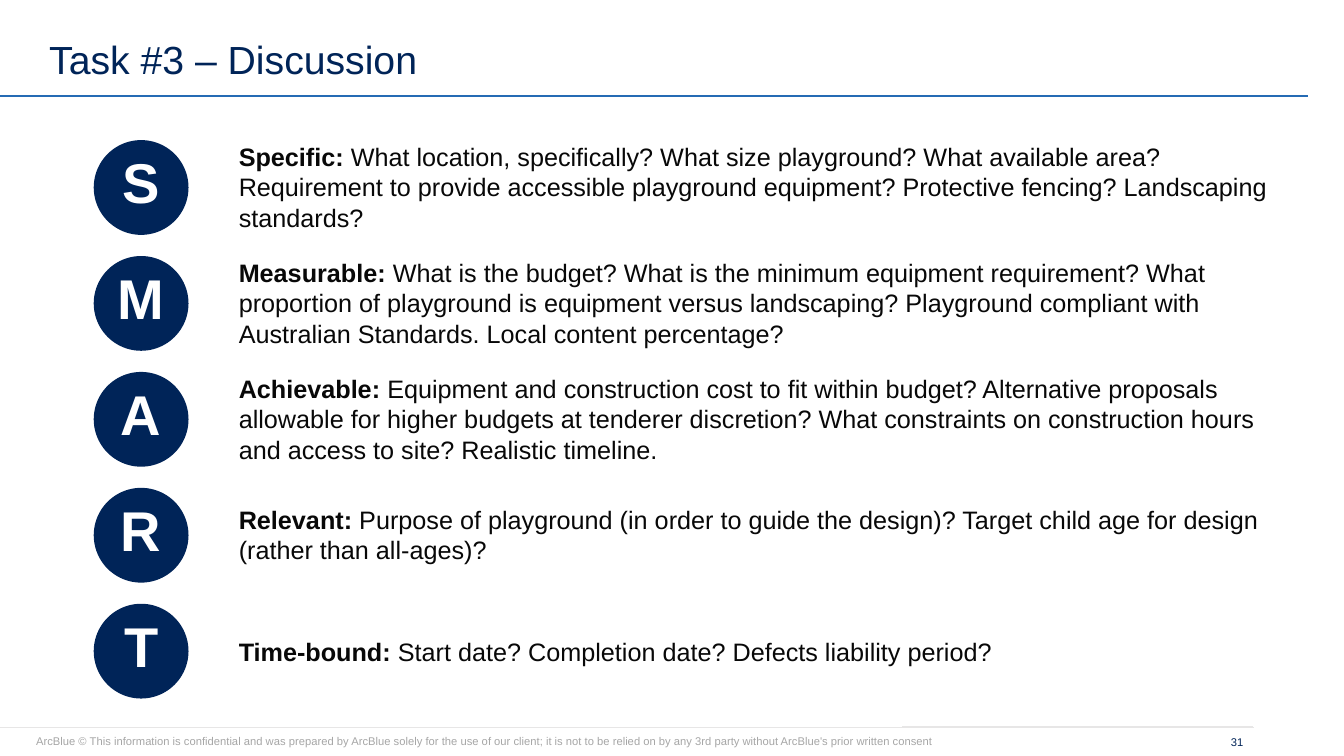
from pptx import Presentation
from pptx.dml.color import RGBColor
from pptx.enum.shapes import MSO_CONNECTOR, MSO_SHAPE
from pptx.enum.text import MSO_ANCHOR, PP_ALIGN
from pptx.oxml.ns import qn
from pptx.util import Inches, Pt
from lxml import etree

NAVY = RGBColor(0x00, 0x24, 0x58)
BLUE = RGBColor(0x25, 0x6B, 0xB4)
INK = RGBColor(0x08, 0x08, 0x08)
GREY = RGBColor(0xA6, 0xA6, 0xA6)
PALE = RGBColor(0xE7, 0xE6, 0xE6)
WHITE = RGBColor(0xFF, 0xFF, 0xFF)

TOP, MIDDLE, BOTTOM = MSO_ANCHOR.TOP, MSO_ANCHOR.MIDDLE, MSO_ANCHOR.BOTTOM
LEFT, CENTER, RIGHT = PP_ALIGN.LEFT, PP_ALIGN.CENTER, PP_ALIGN.RIGHT
STRAIGHT, OVAL = MSO_CONNECTOR.STRAIGHT, MSO_SHAPE.OVAL

FONT = "Arial"
FIRST_TOP, ROW_PITCH, DISC_SIZE = 1.39, 1.15, 0.94

# Heading, height of the text box, questions
CRITERIA = [
    ("Specific", 1.01,
     "What location, specifically? What size playground? What available area? "
     "Requirement to provide accessible playground equipment? Protective fencing? "
     "Landscaping standards?"),
    ("Measurable", 1.01,
     "What is the budget? What is the minimum equipment requirement? What proportion of "
     "playground is equipment versus landscaping? Playground compliant with Australian "
     "Standards. Local content percentage?"),
    ("Achievable", 1.01,
     "Equipment and construction cost to fit within budget? Alternative proposals allowable "
     "for higher budgets at tenderer discretion? What constraints on construction hours and "
     "access to site? Realistic timeline."),
    ("Relevant", 0.71,
     "Purpose of playground (in order to guide the design)? Target child age for design "
     "(rather than all-ages)?"),
    ("Time-bound", 0.4, "Start date? Completion date? Defects liability period?"),
]
FOOTER = ("ArcBlue © This information is confidential and was prepared by ArcBlue solely for "
          "the use of our client; it is not to be relied on by any 3rd party without ArcBlue's "
          "prior written consent")


def write(shape, text, size, color, lead="", bold=False, align=LEFT, anchor=TOP,
          line_spacing=None):
    """Fill a shape with one paragraph, opened by an optional bold lead."""
    frame = shape.text_frame
    frame.word_wrap = True
    frame.vertical_anchor = anchor
    para = frame.paragraphs[0]
    para.alignment = align
    if line_spacing:
        para.line_spacing = line_spacing
    for words, heavy in ((lead, True), (text, bold)):
        if words:
            span = para.add_run()
            span.text = words
            span.font.name = FONT
            span.font.size = Pt(size)
            span.font.bold = heavy
            span.font.color.rgb = color


def add_text(page, left, top, width, height, text, size, color, **style):
    box = page.shapes.add_textbox(Inches(left), Inches(top), Inches(width), Inches(height))
    write(box, text, size, color, **style)


def add_rule(page, start, end, y, color, weight):
    rule = page.shapes.add_connector(STRAIGHT, Inches(start), Inches(y), Inches(end), Inches(y))
    rule.line.color.rgb = color
    rule.line.width = Pt(weight)
    etree.SubElement(rule._element.spPr, qn("a:effectLst"))


def add_disc(page, top, letter):
    disc = page.shapes.add_shape(OVAL, Inches(0.93), Inches(top),
                                 Inches(DISC_SIZE), Inches(DISC_SIZE))
    disc.shadow.inherit = False
    disc.fill.solid()
    disc.fill.fore_color.rgb = NAVY
    disc.line.fill.background()
    disc.text_frame.margin_top = Inches(0)
    disc.text_frame.margin_bottom = Inches(0.12)
    write(disc, letter, 40, WHITE, bold=True, align=CENTER, anchor=MIDDLE)


def add_criterion(page, index, heading, height, questions):
    top = FIRST_TOP + index * ROW_PITCH
    add_disc(page, top, heading[0])
    add_text(page, 2.27, top + (DISC_SIZE - height) / 2, 10.66, height,
             questions, 18, INK, lead=f"{heading}: ")


def main():
    deck = Presentation()
    deck.slide_width, deck.slide_height = Inches(13.33), Inches(7.5)
    page = deck.slides.add_slide(deck.slide_layouts[6])

    # Footer
    add_rule(page, 0, 12.44, 7.22, PALE, 0.75)
    add_text(page, 0.26, 7.24, 9.36, 0.24, FOOTER, 8, GREY)
    add_text(page, 11.92, 7.24, 0.51, 0.24, "31", 8, NAVY, align=RIGHT, anchor=MIDDLE)
    add_rule(page, 8.95, 12.43, 7.21, PALE, 0.5)

    # Title
    add_rule(page, 0, 12.97, 0.95, BLUE, 1.5)
    add_text(page, 0.39, 0, 12.56, 0.87, "Task #3 – Discussion", 28, NAVY,
             anchor=BOTTOM, line_spacing=0.9)

    # SMART criteria
    for index, criterion in enumerate(CRITERIA):
        add_criterion(page, index, *criterion)

    deck.save("out.pptx")


if __name__ == "__main__":
    main()
